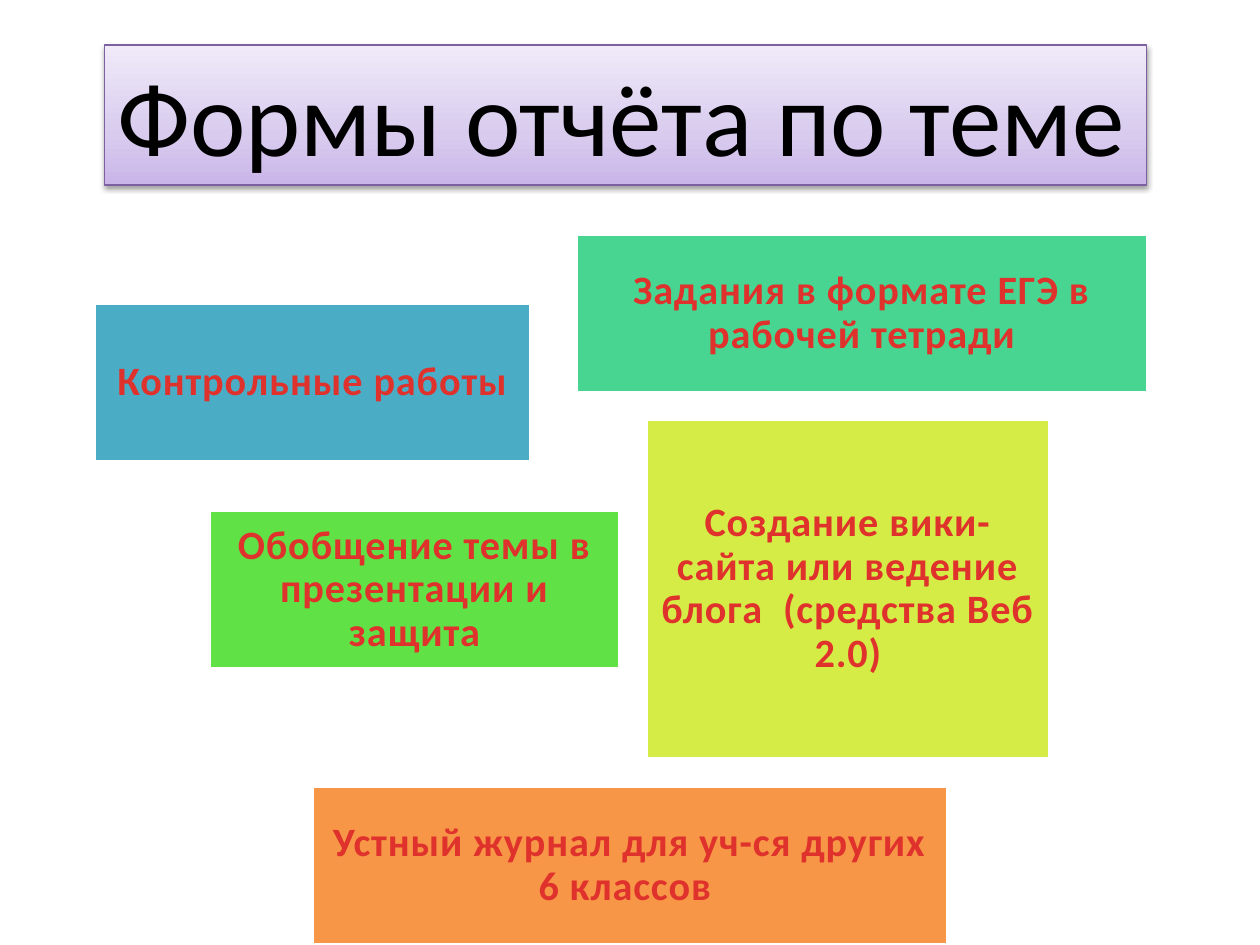
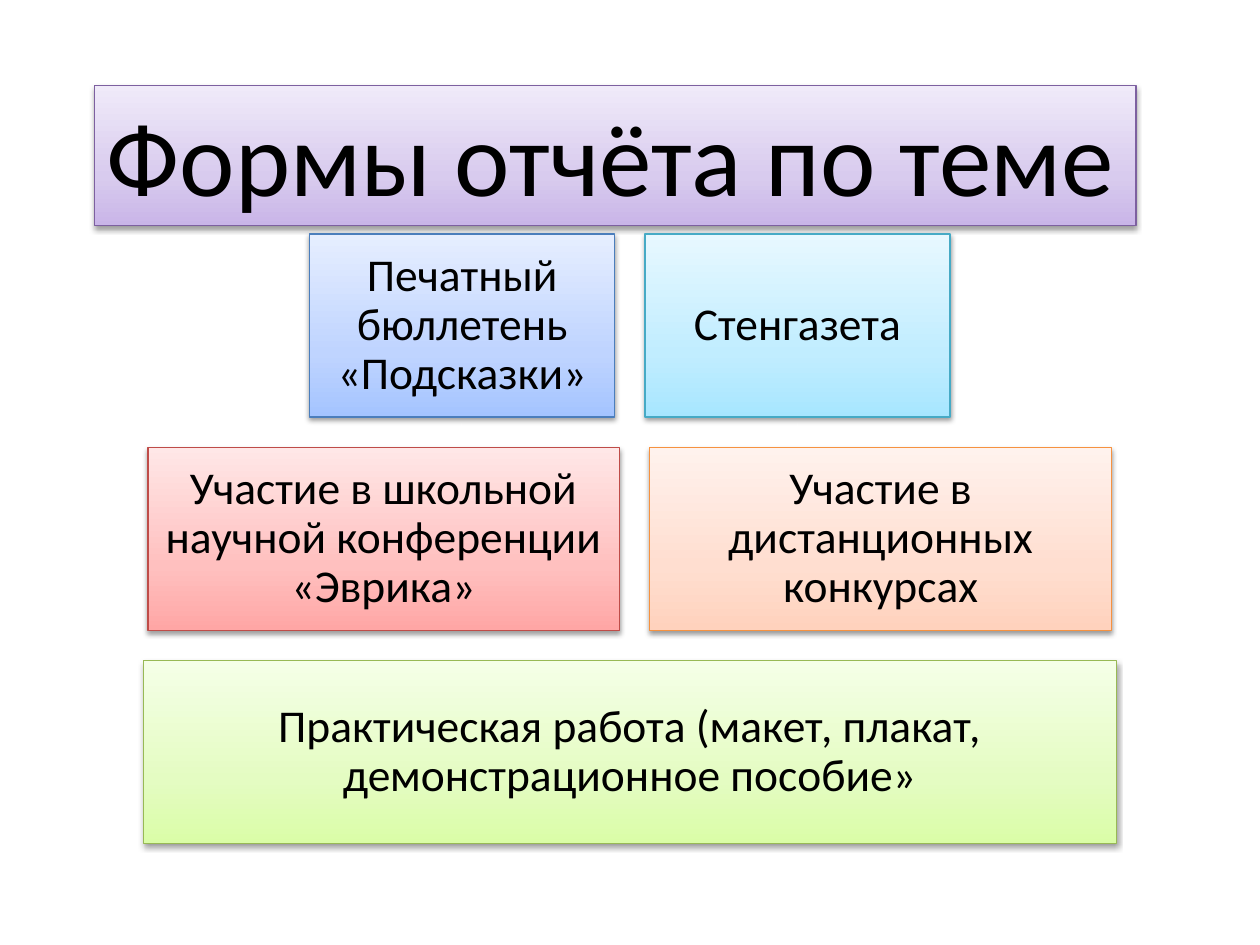
from lxml.etree import SubElement
from pptx import Presentation
from pptx.dml.color import RGBColor
from pptx.enum.shapes import MSO_SHAPE as SHAPE
from pptx.enum.text import MSO_ANCHOR as ANCHOR, PP_ALIGN as ALIGN
from pptx.oxml.ns import qn
from pptx.util import Cm, Pt

SLIDE_W, SLIDE_H = 25.4, 19.05
FONT = "Calibri"
TITLE = "Формы отчёта по теме"

BLACK = RGBColor(0x00, 0x00, 0x00)
WHITE = RGBColor(0xFF, 0xFF, 0xFF)
RED = RGBColor(0xE0, 0x32, 0x2D)
TEAL = RGBColor(0x4B, 0xAC, 0xC6)
MINT = RGBColor(0x48, 0xD4, 0x91)
GREEN = RGBColor(0x60, 0xE1, 0x46)
LIME = RGBColor(0xD5, 0xEC, 0x46)
ORANGE = RGBColor(0xF7, 0x96, 0x46)

# Tints: outline, then gradient colours from bottom to top
PURPLE_TINT = [RGBColor(0x7D, 0x60, 0xA0), RGBColor(0xC9, 0xB5, 0xE8),
               RGBColor(0xD8, 0xCB, 0xEE), RGBColor(0xF0, 0xEA, 0xF9)]
BLUE_TINT = [RGBColor(0x4B, 0x7E, 0xBC), RGBColor(0xA4, 0xC4, 0xFF),
             RGBColor(0xBF, 0xD4, 0xFF), RGBColor(0xE6, 0xEE, 0xFF)]
AQUA_TINT = [RGBColor(0x46, 0xAA, 0xC5), RGBColor(0xA7, 0xE6, 0xFF),
             RGBColor(0xC1, 0xED, 0xFF), RGBColor(0xE7, 0xF8, 0xFF)]
RED_TINT = [RGBColor(0xBF, 0x4C, 0x48), RGBColor(0xFF, 0xA6, 0xA5),
            RGBColor(0xFF, 0xC0, 0xBF), RGBColor(0xFF, 0xE7, 0xE7)]
ORANGE_TINT = [RGBColor(0xF6, 0x92, 0x40), RGBColor(0xFF, 0xD2, 0xBD),
               RGBColor(0xFF, 0xDE, 0xD0), RGBColor(0xFF, 0xF2, 0xED)]
GREEN_TINT = [RGBColor(0x98, 0xB9, 0x55), RGBColor(0xDA, 0xFD, 0xA7),
              RGBColor(0xE4, 0xFC, 0xC2), RGBColor(0xF5, 0xFF, 0xE7)]
STOPS = (0, 35, 100)


def add_box(slide, x, y, w, h):
    sp = slide.shapes.add_shape(SHAPE.RECTANGLE, Cm(x), Cm(y), Cm(w), Cm(h))
    sp.shadow.inherit = False
    return sp


def add_color(parent, color, alpha=None):
    clr = SubElement(parent, qn("a:srgbClr"), val=str(color))
    if alpha is not None:
        SubElement(clr, qn("a:alpha"), val=str(alpha * 1000))


def paint_flat(sp, color):
    sp.fill.solid()
    sp.fill.fore_color.rgb = color
    sp.line.color.rgb = WHITE
    sp.line.width = Pt(2)


def paint_tint(sp, tint):
    """Vertical gradient, thin outline and a soft shadow below."""
    outline, *colors = tint
    sp.fill.gradient()
    sp.fill.gradient_angle = 90
    spPr = sp._element.spPr
    stops = spPr.find(qn("a:gradFill")).find(qn("a:gsLst"))
    for gs in list(stops):
        stops.remove(gs)
    for pos, color in zip(STOPS, colors):
        add_color(SubElement(stops, qn("a:gs"), pos=str(pos * 1000)), color)
    sp.line.color.rgb = outline
    sp.line.width = Pt(0.75)
    shadow = SubElement(spPr.find(qn("a:effectLst")), qn("a:outerShdw"),
                        blurRad=str(Pt(3.1)), dist=str(Pt(1.6)),
                        dir="5400000", rotWithShape="0")
    add_color(shadow, BLACK, alpha=38)


def set_text(sp, text, size, color=BLACK, bold=False, align=ALIGN.CENTER,
             anchor=ANCHOR.MIDDLE, line_spacing=0.9, inset=None, tracking=0):
    tf = sp.text_frame
    tf.word_wrap = True
    tf.vertical_anchor = anchor
    if inset is not None:
        tf.margin_left = tf.margin_right = Cm(inset)
        tf.margin_top = tf.margin_bottom = Cm(inset)
    p = tf.paragraphs[0]
    p.alignment = align
    p.line_spacing = line_spacing
    r = p.add_run()
    r.text = text
    r.font.name = FONT
    r.font.size = Pt(size)
    r.font.bold = bold
    r.font.color.rgb = color
    if tracking:
        r._r.get_or_add_rPr().set("spc", str(int(tracking * 100)))


def add_title(slide, x, y):
    sp = add_box(slide, x, y, 21, 2.82)
    paint_tint(sp, PURPLE_TINT)
    set_text(sp, TITLE, 60, align=ALIGN.LEFT, anchor=ANCHOR.TOP, line_spacing=1)


def add_scattered_cards(slide, x, y, cards):
    """Flat cards, each placed by its offset from (x, y)."""
    for text, color, dx, dy, w, h in cards:
        sp = add_box(slide, x + dx, y + dy, w, h)
        paint_flat(sp, color)
        set_text(sp, text, 23, color=RED, bold=True, inset=0.25, tracking=0.5)


def add_centred_rows(slide, x, y, w, rows, row_h=3.69, gap=0.61):
    """Rows of tinted cards, each row centred in the width w."""
    for i, row in enumerate(rows):
        row_w = sum(card_w for _, _, card_w in row) + gap * (len(row) - 1)
        left = x + (w - row_w) / 2
        for text, tint, card_w in row:
            sp = add_box(slide, left, y + i * (row_h + gap), card_w, row_h)
            paint_tint(sp, tint)
            set_text(sp, text, 26, inset=0.28)
            left += card_w + gap


def main():
    prs = Presentation()
    prs.slide_width, prs.slide_height = Cm(SLIDE_W), Cm(SLIDE_H)
    blank = prs.slide_layouts[6]

    # Slide 1: scattered cards
    slide = prs.slides.add_slide(blank)
    add_title(slide, 2.11, 0.91)
    card_h = 3.2
    add_scattered_cards(slide, 1.9, 4.72, [
        ("Контрольные работы", TEAL, 0, 1.4, 8.8, card_h),
        ("Задания в формате ЕГЭ в рабочей тетради", MINT, 9.71, 0, 11.53, card_h),
        ("Обобщение темы в презентации и защита", GREEN, 2.32, 5.57, 8.28, card_h),
        ("Создание вики-сайта или ведение блога  (средства Веб 2.0)", LIME,
         11.13, 3.74, 8.13, 6.83),
        ("Устный журнал для уч-ся других 6 классов ", ORANGE,
         4.4, 11.13, 12.8, card_h),
    ])

    # Slide 2: centred rows
    slide = prs.slides.add_slide(blank)
    add_title(slide, 1.9, 1.73)
    add_centred_rows(slide, 0, 4.72, SLIDE_W, [
        [("Печатный бюллетень «Подсказки»", BLUE_TINT, 6.15),
         ("Стенгазета", AQUA_TINT, 6.15)],
        [("Участие в школьной научной конференции «Эврика»", RED_TINT, 9.5),
         ("Участие в дистанционных конкурсах", ORANGE_TINT, 9.32)],
        [("Практическая работа (макет, плакат, демонстрационное пособие»",
          GREEN_TINT, 19.61)],
    ])

    prs.save("out.pptx")


if __name__ == "__main__":
    main()
